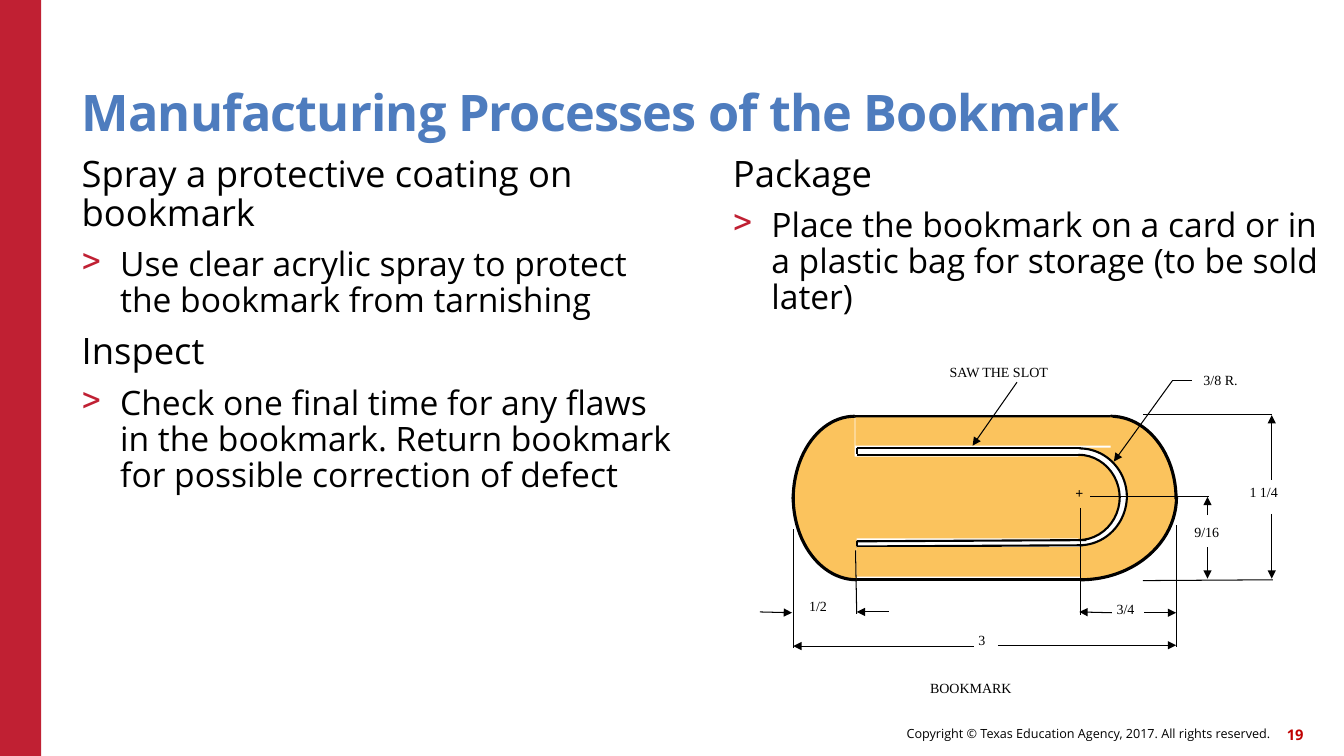
"""Build the bookmark manufacturing slide with its dimensioned drawing."""
from dataclasses import dataclass

from lxml import etree
from pptx import Presentation
from pptx.dml.color import RGBColor
from pptx.enum.shapes import MSO_CONNECTOR, MSO_SHAPE
from pptx.enum.text import MSO_ANCHOR, PP_ALIGN
from pptx.oxml.ns import qn
from pptx.util import Cm, Pt

STRAIGHT = MSO_CONNECTOR.STRAIGHT
RECT, ARC = MSO_SHAPE.RECTANGLE, MSO_SHAPE.ARC
TOP, MIDDLE, BOTTOM = MSO_ANCHOR.TOP, MSO_ANCHOR.MIDDLE, MSO_ANCHOR.BOTTOM
LEFT, RIGHT = PP_ALIGN.LEFT, PP_ALIGN.RIGHT

COLORS = {
    "band": "C02033",
    "title": "4E7CBE",
    "number": "C00000",
    "brass": "FBC35D",
    "black": "000000",
    "white": "FFFFFF",
}
SANS, SERIF = "Open Sans", "Times New Roman"
CM_PER_INCH = 2.54
EDGE, SLOT, THIN = 2.25, 1.5, 0.75


@dataclass(frozen=True)
class Line:
    x1: float
    y1: float
    x2: float
    y2: float
    width: float = THIN
    arrow: bool = False


@dataclass(frozen=True)
class Quarter:
    cx: float
    cy: float
    rx: float
    ry: float
    start: int
    fill: str = "brass"
    width: float = EDGE


@dataclass(frozen=True)
class Block:
    x: float
    y: float
    w: float
    h: float
    color: str = "brass"


@dataclass(frozen=True)
class Label:
    text: str
    x: float
    y: float
    w: float
    h: float
    bold: bool = False


BAND = Block(0, 0, 0.41, 7.5, "band")
RIGHT_END = Block(10.78, 4.44, 0.35, 0.99)
INNER_BLOCKS = [
    Block(8.47, 4.53, 2.27, 0.81),
    Block(8.5, 5.43, 2.34, 0.29),
    Block(8.49, 4.14, 2.55, 0.28),
]
EDGE_LINES = [
    Line(8.45, 5.75, 10.82, 5.75, EDGE),
    Line(11.05, 4.13, 8.45, 4.13, EDGE),
]
SLOT_LINES = [
    Line(8.5, 5.42, 10.74, 5.41, SLOT),
    Line(8.5, 4.45, 10.72, 4.45, SLOT),
    Line(8.5, 5.37, 10.78, 5.36, SLOT),
    Line(8.5, 4.51, 10.73, 4.51, SLOT),
    Line(8.5, 5.42, 8.5, 5.37, SLOT),
    Line(8.5, 4.5, 8.5, 4.45, SLOT),
]
QUARTERS = [
    Quarter(8.5, 4.93, 0.63, 0.82, 90),
    Quarter(8.48, 4.95, 0.61, 0.82, 180),
    Quarter(10.72, 4.93, 0.95, 0.82, 0),
    Quarter(11.02, 4.95, 0.65, 0.82, 270),
    Quarter(10.71, 4.93, 0.47, 0.48, 270, "white", SLOT),
    Quarter(10.71, 4.92, 0.47, 0.49, 0, "white", SLOT),
    Quarter(10.7, 4.94, 0.41, 0.43, 270, "brass", SLOT),
    Quarter(10.7, 4.93, 0.41, 0.43, 0, "brass", SLOT),
]
EXTENSION_LINES = [
    Line(7.87, 5.25, 7.87, 6.43),
    Line(11.67, 5.21, 11.67, 6.42),
    Line(12.63, 5.75, 11.34, 5.76),
    Line(12.62, 4.11, 11.34, 4.11),
    Line(8.49, 5.46, 8.5, 6.09),
    Line(10.72, 5.04, 10.72, 6.1),
    Line(10.82, 4.93, 12, 4.93),
    Line(11.63, 3.78, 11.83, 3.78),
]
ARROWS = [Line(*ends, arrow=True) for ends in (
    (11.63, 3.78, 11.05, 4.58),
    (9.66, 6.41, 7.87, 6.41),
    (9.9, 6.4, 11.67, 6.4),
    (12.62, 5.1, 12.62, 5.74),
    (12.62, 4.76, 12.62, 4.12),
    (7.54, 6.07, 7.86, 6.08),
    (8.82, 6.07, 8.5, 6.07),
    (11.35, 6.08, 11.67, 6.08),
    (11.03, 6.08, 10.71, 6.07),
    (11.98, 5.43, 11.98, 5.74),
    (11.98, 5.11, 11.98, 4.93),
    (10.09, 3.79, 9.65, 4.42),
)]
LABELS = [
    Label("+", 10.63, 4.77, 0.18, 0.23, True),
    Label("3/8 R.", 11.9, 3.65, 0.58, 0.33),
    Label("SAW THE SLOT", 9.38, 3.57, 1.82, 0.25),
    Label("3", 9.67, 6.23, 0.22, 0.35),
    Label("1/2", 7.99, 5.89, 0.39, 0.36),
    Label("3/4", 11.04, 5.92, 0.37, 0.33),
    Label("1 1/4", 12.36, 4.76, 0.49, 0.33),
    Label("9/16", 11.81, 5.15, 0.47, 0.26),
    Label("BOOKMARK", 9.19, 6.7, 1.51, 0.41),
]
COLUMNS = {
    0.81: [
        ("Spray a protective coating on bookmark",
         "Use clear acrylic spray to protect the bookmark from tarnishing"),
        ("Inspect",
         "Check one final time for any flaws in the bookmark. "
         "Return bookmark for possible correction of defect"),
    ],
    7.27: [
        ("Package",
         "Place the bookmark on a card or in a plastic bag for storage (to be sold later)"),
    ],
}


def inch(value: float) -> Cm:
    return Cm(round(value * CM_PER_INCH, 2))


def rgb(name: str) -> RGBColor:
    return RGBColor.from_string(COLORS[name])


def add_box(s, x, y, w, h, anchor=TOP, inset=0.0):
    tf = s.shapes.add_textbox(inch(x), inch(y), inch(w), inch(h)).text_frame
    tf.word_wrap = True
    tf.vertical_anchor = anchor
    tf.margin_left = tf.margin_right = tf.margin_top = tf.margin_bottom = inch(inset)
    return tf


def write(p, text: str, *, size: float, font=SANS, color="black", bold=False,
          align=LEFT, leading=1.0, before=0.0, tracking=0, bullet="") -> None:
    if bullet:
        pPr = p._p.get_or_add_pPr()
        indent = inch(0.38)
        pPr.set("marL", str(indent))
        pPr.set("indent", str(-indent))
        bu_color = etree.SubElement(pPr, qn("a:buClr"))
        etree.SubElement(bu_color, qn("a:srgbClr"), val=COLORS["band"])
        etree.SubElement(pPr, qn("a:buChar"), char=bullet)
    p.alignment, p.line_spacing, p.space_before = align, leading, Pt(before)
    r = p.add_run()
    r.text = text
    r.font.name, r.font.size, r.font.bold = font, Pt(size), bold
    r.font.color.rgb = rgb(color)
    if tracking:
        r._r.get_or_add_rPr().set("spc", str(tracking))


def add_block(s, b: Block) -> None:
    sp = s.shapes.add_shape(RECT, inch(b.x), inch(b.y), inch(b.w), inch(b.h))
    sp.shadow.inherit = False
    sp.fill.solid()
    sp.fill.fore_color.rgb = rgb(b.color)
    sp.line.fill.background()


def add_quarter(s, q: Quarter) -> None:
    sp = s.shapes.add_shape(ARC, inch(q.cx - q.rx), inch(q.cy - q.ry),
                            inch(2 * q.rx), inch(2 * q.ry))
    sp.shadow.inherit = False
    for i, angle in enumerate((q.start, (q.start + 90) % 360)):
        sp.adjustments[i] = angle * 0.6
    sp.fill.solid()
    sp.fill.fore_color.rgb = rgb(q.fill)
    sp.line.color.rgb = rgb("black")
    sp.line.width = Pt(q.width)


def add_line(s, ln: Line) -> None:
    sp = s.shapes.add_connector(STRAIGHT, inch(ln.x1), inch(ln.y1), inch(ln.x2), inch(ln.y2))
    sp.line.color.rgb = rgb("black")
    sp.line.width = Pt(ln.width)
    if ln.arrow:
        etree.SubElement(sp.line._get_or_add_ln(), qn("a:tailEnd"), type="triangle")
    etree.SubElement(sp._element.spPr, qn("a:effectLst"))


def add_texts(s) -> None:
    tf = add_box(s, 6.14, 7.12, 6.46, 0.32, MIDDLE)
    write(tf.paragraphs[0], "Copyright © Texas Education Agency, 2017. All rights reserved.",
          size=9, align=RIGHT)
    tf = add_box(s, 12.51, 7.13, 0.42, 0.32, MIDDLE)
    write(tf.paragraphs[0], "19", size=10.5, color="number", bold=True, align=RIGHT)
    tf = add_box(s, 0.81, 0.45, 11, 0.96, BOTTOM)
    write(tf.paragraphs[0], "Manufacturing Processes of the Bookmark", size=36,
          color="title", bold=True, leading=0.9, tracking=-60)
    for x, steps in COLUMNS.items():
        tf = add_box(s, x, 1.55, 5.86, 5.18)
        for i, (heading, detail) in enumerate(steps):
            p = tf.add_paragraph() if i else tf.paragraphs[0]
            write(p, heading, size=26, leading=0.89, before=10 if i else 0)
            write(tf.add_paragraph(), detail, size=24, leading=0.89, before=10, bullet=">")


def add_drawing(s) -> None:
    add_block(s, RIGHT_END)
    for ln in EDGE_LINES:
        add_line(s, ln)
    for q in QUARTERS:
        add_quarter(s, q)
    for ln in SLOT_LINES:
        add_line(s, ln)
    for b in INNER_BLOCKS:
        add_block(s, b)
    for ln in EXTENSION_LINES + ARROWS:
        add_line(s, ln)
    for lb in LABELS:
        tf = add_box(s, lb.x, lb.y, lb.w, lb.h, inset=0.04)
        write(tf.paragraphs[0], lb.text, size=10, font=SERIF, bold=lb.bold)


def main() -> None:
    prs = Presentation()
    prs.slide_width, prs.slide_height = Cm(33.87), Cm(19.05)
    s = prs.slides.add_slide(prs.slide_layouts[6])
    add_block(s, BAND)
    add_texts(s)
    add_drawing(s)
    prs.save("out.pptx")


if __name__ == "__main__":
    main()
